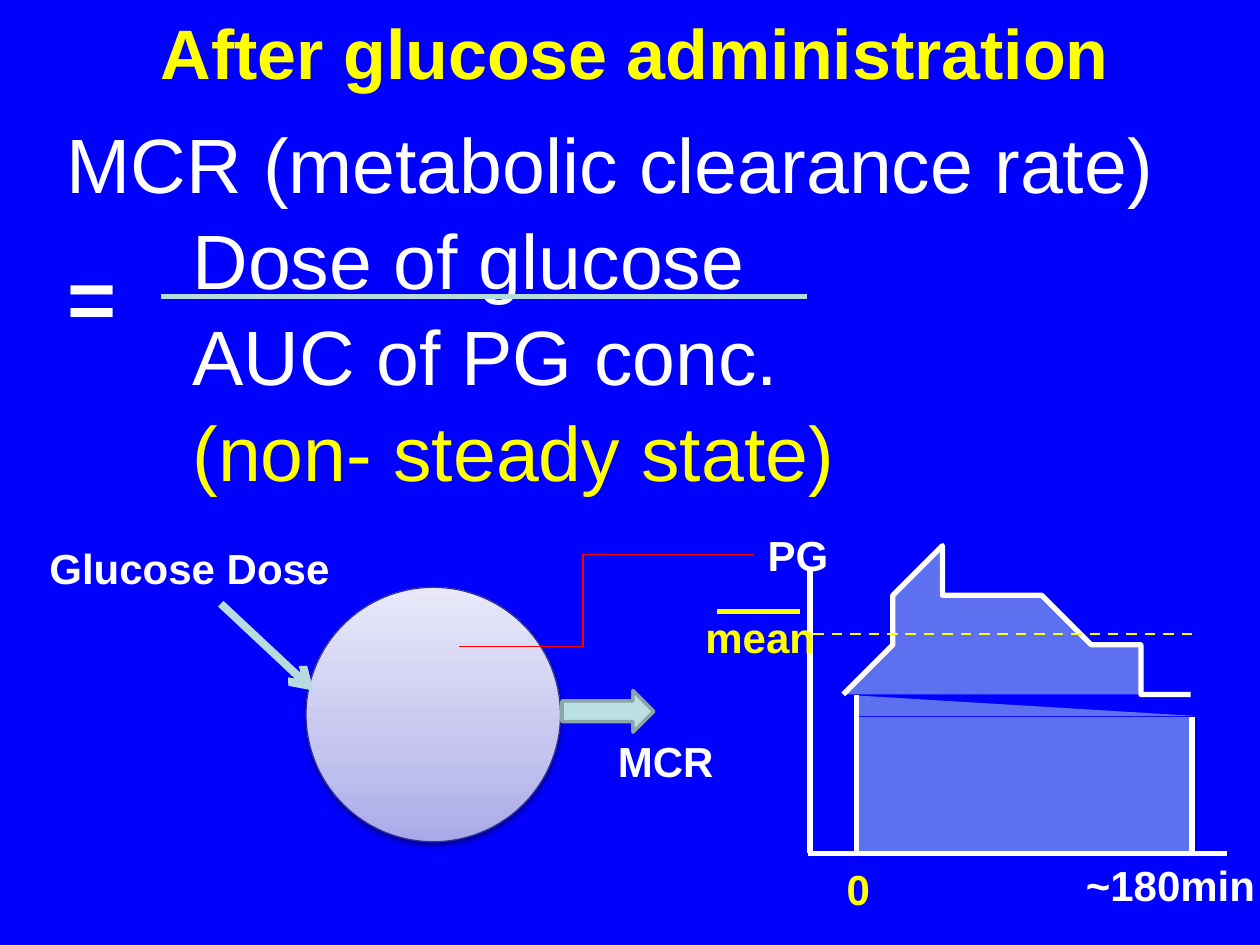
from copy import deepcopy
from lxml.etree import SubElement
from pptx import Presentation
from pptx.dml.color import RGBColor
from pptx.enum.dml import MSO_LINE as DASH
from pptx.enum.shapes import MSO_CONNECTOR as CONN, MSO_SHAPE as SHAPE
from pptx.enum.text import MSO_ANCHOR as ANCHOR, MSO_AUTO_SIZE as FIT, PP_ALIGN as ALIGN
from pptx.oxml.ns import qn
from pptx.util import Cm, Pt

BLUE, WHITE, YELLOW, RED = "0000FF", "FFFFFF", "FFFF00", "FF0000"
TEAL, PALE = "B6DCDF", "BBE0E3"
CURVE = [
    (17.25, 14.02), (17.35, 13.74), (17.58, 13.16), (17.68, 12.93), (17.78, 12.67),
    (17.98, 12.14), (18.16, 11.86), (18.39, 11.58), (18.69, 11.43), (18.97, 11.41),
    (19.25, 11.46), (19.48, 11.51), (19.81, 11.61), (19.96, 11.66), (20.27, 11.79),
    (20.42, 11.86), (20.73, 12.04), (21.01, 12.19), (21.41, 12.45), (21.77, 12.67),
    (22.61, 13.28), (23.16, 13.67), (23.62, 14.07), (23.88, 14.3), (24.03, 14.45),
]


def rgb(code):
    return RGBColor.from_string(code)


class Board:
    font = "Arial"

    def __init__(self, slide, background):
        self.s = slide
        slide.background.fill.solid()
        slide.background.fill.fore_color.rgb = rgb(background)

    def text(self, box, paragraphs, size=24, bold=True, align=ALIGN.CENTER,
             wrap=False, inset=True, anchor=ANCHOR.TOP, fit=FIT.SHAPE_TO_FIT_TEXT):
        tf = self.s.shapes.add_textbox(*map(Cm, box)).text_frame
        tf.word_wrap, tf.auto_size, tf.vertical_anchor = wrap, fit, anchor
        if not inset:
            tf.margin_left = tf.margin_right = tf.margin_top = tf.margin_bottom = 0
        for i, (words, color) in enumerate(paragraphs):
            p = tf.add_paragraph() if i else tf.paragraphs[0]
            p.alignment = align
            r = p.add_run()
            r.text = words
            r.font.name, r.font.size, r.font.bold = self.font, Pt(size), bold
            r.font.color.rgb = rgb(color)
        return tf

    def label(self, box, words, color=WHITE, **style):
        return self.text(box, [(words, color)], **style)

    def line(self, start, end, color=WHITE, width=3, dash=None, head=None, bend=None):
        kind = CONN.STRAIGHT if bend is None else CONN.ELBOW
        c = self.s.shapes.add_connector(kind, *map(Cm, start + end))
        c.line.color.rgb, c.line.width = rgb(color), Pt(width)
        if dash:
            c.line.dash_style = dash
        props = c._element.spPr
        if head:
            SubElement(props.find(qn("a:ln")), qn("a:tailEnd"), type=head)
        if bend is not None:
            guides = props.find(qn("a:prstGeom")).get_or_add_avLst()
            SubElement(guides, qn("a:gd"), name="adj1", fmla=f"val {round(bend * 100000)}")
        SubElement(props, qn("a:effectLst"))

    def paint(self, sp, fill, alpha=None, line=None, width=1):
        sp.shadow.inherit = False
        sp.fill.solid()
        sp.fill.fore_color.rgb = rgb(fill)
        if alpha:
            color = sp._element.spPr.find(qn("a:solidFill"))[0]
            SubElement(color, qn("a:alpha"), val=str(alpha * 1000))
        if line:
            sp.line.color.rgb, sp.line.width = rgb(line), Pt(width)
        else:
            sp.line.fill.background()

    def shape(self, kind, box, fill, **style):
        sp = self.s.shapes.add_shape(kind, *map(Cm, box))
        self.paint(sp, fill, **style)
        return sp

    def curve(self, points, fill, **style):
        builder = self.s.shapes.build_freeform(*points[0], scale=Cm(1))
        builder.add_line_segments(points[1:], close=False)
        self.paint(builder.convert_to_shape(), fill, **style)

    def sphere(self, box, stops, line, width):
        sp = self.shape(SHAPE.OVAL, box, stops[0][1], line=line, width=width)
        sp.fill.gradient()
        sp.fill.gradient_angle = 90
        stop_list = sp._element.spPr.find(qn("a:gradFill")).find(qn("a:gsLst"))
        stop_list.append(deepcopy(stop_list[0]))
        for stop, (position, color) in zip(sp.fill.gradient_stops, stops):
            stop.position, stop.color.rgb = position, rgb(color)
        effects = sp._element.spPr.find(qn("a:effectLst"))
        shadow = SubElement(effects, qn("a:outerShdw"), blurRad=str(Pt(3.1)),
                            dist=str(Pt(1.6)), dir="5400000", rotWithShape="0")
        color = SubElement(shadow, qn("a:srgbClr"), val="000000")
        SubElement(color, qn("a:alpha"), val="38000")


def add_formula(b):
    tf = b.text((1.09, 2.08, 22.94, 7.77), [
        ("MCR (metabolic clearance rate)", WHITE),
        ("Dose of glucose", WHITE),
        ("AUC of PG conc.", WHITE),
        ("(non- steady state)", YELLOW),
    ], size=44, bold=False, align=ALIGN.LEFT, wrap=True)
    tf.margin_top = Cm(0.2)
    for i, p in enumerate(tf.paragraphs):
        p.line_spacing = 1.04
        if i:
            p._p.get_or_add_pPr().set("marL", str(Cm(2.54)))
    b.line((3.25, 5.97), (16.26, 5.97), TEAL)
    b.label((1.09, 4.83, 1.52, 2.31), "=", size=48)


def add_body_model(b):
    b.sphere((6.17, 11.84, 5.13, 5.13),
             [(0, "A9A9E9"), (0.35, "C4C4EF"), (1, "E8E8FA")], "2F2F98", 0.75)
    b.shape(SHAPE.RIGHT_ARROW, (11.33, 13.92, 1.85, 0.84), PALE, line="8AA6A8", width=2)
    b.line((4.45, 12.17), (6.32, 13.92), TEAL, 4.5, head="arrow")
    b.label((0.71, 10.82, 6.22, 1.27), "Glucose Dose")
    b.label((15.21, 10.54, 1.75, 1.3), "PG")


def add_glucose_plot(b):
    left, right, base = 17.27, 24.03, 17.2
    axis_x, start_y, end_y, mean_y, bar_y = 16.33, 14.02, 14.45, 12.78, 12.32
    b.shape(SHAPE.RECTANGLE, (left, end_y, 6.78, 2.74), PALE, alpha=50)
    b.line((axis_x, 11.48), (axis_x, base))
    b.line((16.28, base), (24.74, base))
    b.shape(SHAPE.RIGHT_TRIANGLE, (left, start_y, 6.78, 0.41), PALE, alpha=50)
    b.curve(CURVE, PALE, alpha=50, line=WHITE, width=3)
    b.line((left, start_y), (left, base))
    b.line((right, end_y), (right, base))
    tick = dict(align=ALIGN.LEFT, inset=False)
    b.label((17.07, 17.4, 0.48, 1.02), "0", YELLOW, **tick)
    b.label((21.89, 17.32, 3.45, 1.02), "~180min", **tick)
    b.line((right, mean_y), (axis_x, mean_y), YELLOW, 1.5, dash=DASH.DASH)
    b.label((14.22, bar_y, 2.24, 1.02), "mean", YELLOW, **tick)
    b.line((14.45, bar_y), (16.13, bar_y), YELLOW, 2.88)


def main():
    prs = Presentation()
    prs.slide_width, prs.slide_height = Cm(25.4), Cm(19.05)
    b = Board(prs.slides.add_slide(prs.slide_layouts[6]), BLUE)
    add_formula(b)
    add_body_model(b)
    add_glucose_plot(b)
    b.line((15.21, 11.18), (9.25, 13.03), RED, 0.75, bend=0.58)
    b.label((12.19, 14.71, 2.46, 1.27), "MCR")
    b.label((1.37, 0, 22.86, 2.08), "After glucose administration", YELLOW, size=40,
            wrap=True, anchor=ANCHOR.MIDDLE, fit=FIT.NONE)
    prs.save("out.pptx")


if __name__ == "__main__":
    main()
